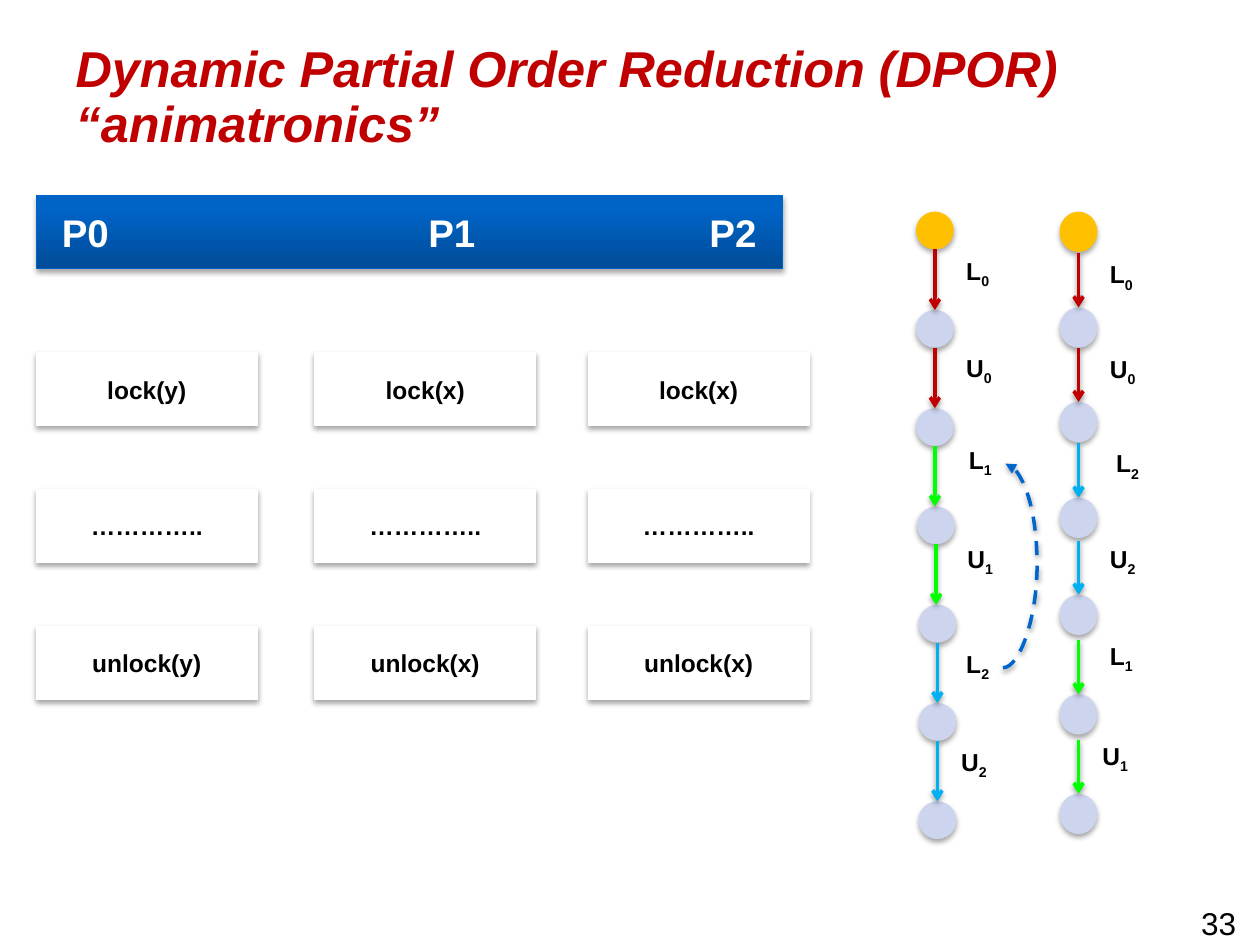
from lxml.etree import SubElement
from pptx import Presentation
from pptx.dml.color import RGBColor as RGB
from pptx.enum.dml import MSO_LINE as Dash
from pptx.enum.shapes import MSO_CONNECTOR as Link, MSO_SHAPE as Shape
from pptx.enum.text import MSO_ANCHOR as Anchor, MSO_AUTO_SIZE as Fit, PP_ALIGN as Align
from pptx.oxml.ns import qn
from pptx.util import Inches, Pt

HUES = {
    "red": "C00000", "green": "00FF00", "cyan": "00B0F0", "gold": "FFC000",
    "pale": "CCD4EE", "white": "FFFFFF", "black": "000000", "curve": "0066CC",
    "edge": "0064C8", "deep": "004C98", "blue": "0063C6",
}
INK = {name: RGB.from_string(code) for name, code in HUES.items()}


def write(frame, text, sub="", size=14, hue="black", bold=True, italic=False,
          align=Align.LEFT, anchor=Anchor.TOP, wrap=True, fit=Fit.NONE):
    frame.word_wrap, frame.auto_size, frame.vertical_anchor = wrap, fit, anchor
    para = frame.paragraphs[0]
    para.alignment = align
    for part in filter(None, (text, sub)):
        run = para.add_run()
        run.text = part
        font = run.font
        font.name, font.size, font.bold, font.italic = "Arial", Pt(size), bold, italic
        font.color.rgb = INK[hue]
    if sub:
        run._r.get_or_add_rPr().set("baseline", "-25000")
    return para


def shade(shape, dist=1.8, alpha=35):
    props = shape._element.spPr
    glow = SubElement(SubElement(props, qn("a:effectLst")), qn("a:outerShdw"),
                      blurRad=str(Pt(3.1)), dist=str(Pt(dist)), dir="5400000", rotWithShape="0")
    tint = SubElement(glow, qn("a:srgbClr"), val=HUES["black"])
    SubElement(tint, qn("a:alpha"), val=str(alpha * 1000))


deck = Presentation()
deck.slide_width, deck.slide_height = Inches(10), Inches(7.5)
slide = deck.slides.add_slide(deck.slide_layouts[5])
shapes = slide.shapes

# Title
title = shapes.title
title.left, title.top = Inches(0.5), Inches(0.3)
title.width, title.height = Inches(9), Inches(0.87)
para = write(title.text_frame, "Dynamic Partial Order Reduction (DPOR) “animatronics”",
             size=28.8, hue="red", italic=True)
para.line_spacing = 0.9

# Process header, with tab stops for the names
bar = shapes.add_shape(Shape.RECTANGLE, Inches(0.29), Inches(1.55), Inches(5.92), Inches(0.58))
bar.fill.gradient()
bar.fill.gradient_angle = 90
for stop, hue, pos in zip(bar.fill.gradient_stops, ("deep", "blue"), (0, 0.8)):
    stop.color.rgb, stop.position = INK[hue], pos
bar.line.color.rgb, bar.line.width = INK["edge"], Pt(0.75)
shade(bar)
bar.text_frame.margin_left = Inches(0.2)
para = write(bar.text_frame, "P0\tP1\tP2", size=22, hue="white", anchor=Anchor.MIDDLE)
tabs = SubElement(para._p.get_or_add_pPr(), qn("a:tabLst"))
for pos in (2.91, 5.14):
    SubElement(tabs, qn("a:tab"), pos=str(Inches(pos)), algn="l")

# Steps of each process
for x, var in ((0.29, "y"), (2.5, "x"), (4.67, "x")):
    for row, text in enumerate((f"lock({var})", "…………..", f"unlock({var})")):
        box = shapes.add_shape(Shape.RECTANGLE, Inches(x), Inches(2.8 + 1.085 * row),
                               Inches(1.75), Inches(0.58))
        box.fill.solid()
        box.fill.fore_color.rgb = INK["white"]
        box.line.color.rgb, box.line.width = INK["white"], Pt(0.75)
        shade(box)
        write(box.text_frame, text, align=Align.CENTER, anchor=Anchor.MIDDLE)

# Two traces: nodes as (x, y), labels as (name, index, x, y)
traces = [
    {"tall": 0.3, "reach": 0.48, "hues": ("red", "green", "cyan"),
     "nodes": [(x, 1.68 + 0.78 * i) for i, x in
               enumerate((7.27, 7.27, 7.27, 7.28, 7.29, 7.29, 7.29))],
     "labels": [("L", "0", 7.57, 1.98), ("U", "0", 7.57, 2.75), ("L", "1", 7.59, 3.48),
                ("U", "1", 7.58, 4.27), ("L", "2", 7.57, 5.1), ("U", "2", 7.53, 5.88)]},
    {"tall": 0.32, "reach": 0.43, "hues": ("red", "cyan", "green"),
     "nodes": [(8.41, y) for y in (1.68, 2.44, 3.19, 3.95, 4.72, 5.51, 6.3)],
     "labels": [("L", "0", 8.71, 2.01), ("U", "0", 8.71, 2.76), ("L", "2", 8.76, 3.51),
                ("U", "2", 8.71, 4.27), ("L", "1", 8.71, 5.04), ("U", "1", 8.65, 5.83)]},
]
arrows = []
for trace in traces:
    nodes = trace["nodes"]
    for i, (x, y) in enumerate(nodes):
        dot = shapes.add_shape(Shape.OVAL, Inches(x), Inches(y), Inches(0.3),
                               Inches(trace["tall"]))
        dot.fill.solid()
        dot.fill.fore_color.rgb = INK["pale" if i else "gold"]
        dot.line.fill.background()
        shade(dot)
        if i:
            mid = nodes[i - 1][0] + 0.15
            arrows.append((Link.STRAIGHT, mid, y - trace["reach"], mid, y,
                           trace["hues"][(i - 1) // 2], "arrow"))
    for name, sub, x, y in trace["labels"]:
        wide = 0.39 if name == "L" else 0.45
        label = shapes.add_textbox(Inches(x), Inches(y), Inches(wide), Inches(0.4))
        write(label.text_frame, name, sub=sub, wrap=False, fit=Fit.SHAPE_TO_FIT_TEXT)

# Arrows between nodes, and the dashed backtrack curve
arrows.append((Link.CURVE, 7.96, 5.3, 7.98, 3.68, "curve", "triangle"))
for kind, x1, y1, x2, y2, hue, head in arrows:
    arrow = shapes.add_connector(kind, Inches(x1), Inches(y1), Inches(x2), Inches(y2))
    arrow.line.color.rgb, arrow.line.width = INK[hue], Pt(2)
    if kind == Link.CURVE:
        arrow.line.dash_style = Dash.DASH
        bend = arrow._element.spPr.find(qn("a:prstGeom")).find(qn("a:avLst"))
        SubElement(bend, qn("a:gd"), name="adj1", fmla="val 1350000")
    SubElement(arrow.line._get_or_add_ln(), qn("a:tailEnd"), type=head)
    shade(arrow, dist=1.6, alpha=38)

# Page number
page = shapes.add_textbox(Inches(7.83), Inches(7.16), Inches(2.08), Inches(0.33))
write(page.text_frame, "33", size=18, bold=False, align=Align.RIGHT,
      anchor=Anchor.MIDDLE, wrap=False)

deck.save("out.pptx")
